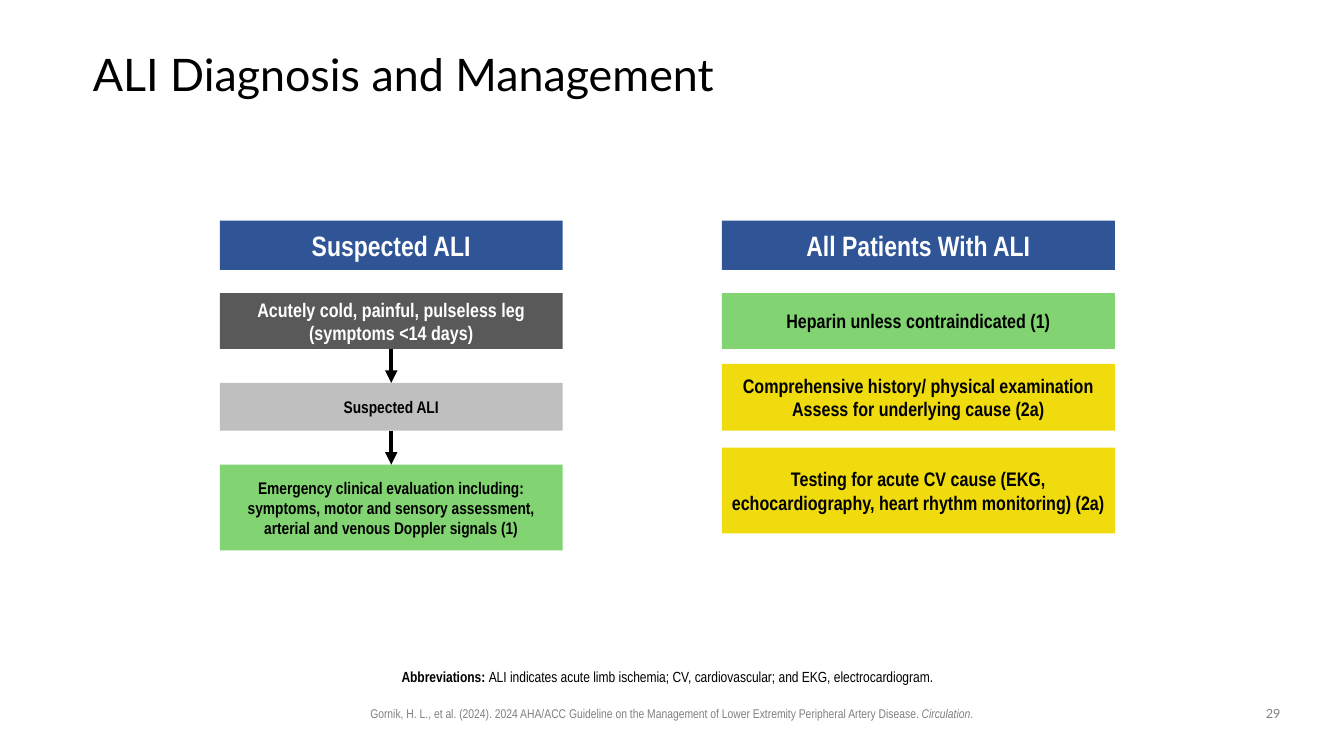
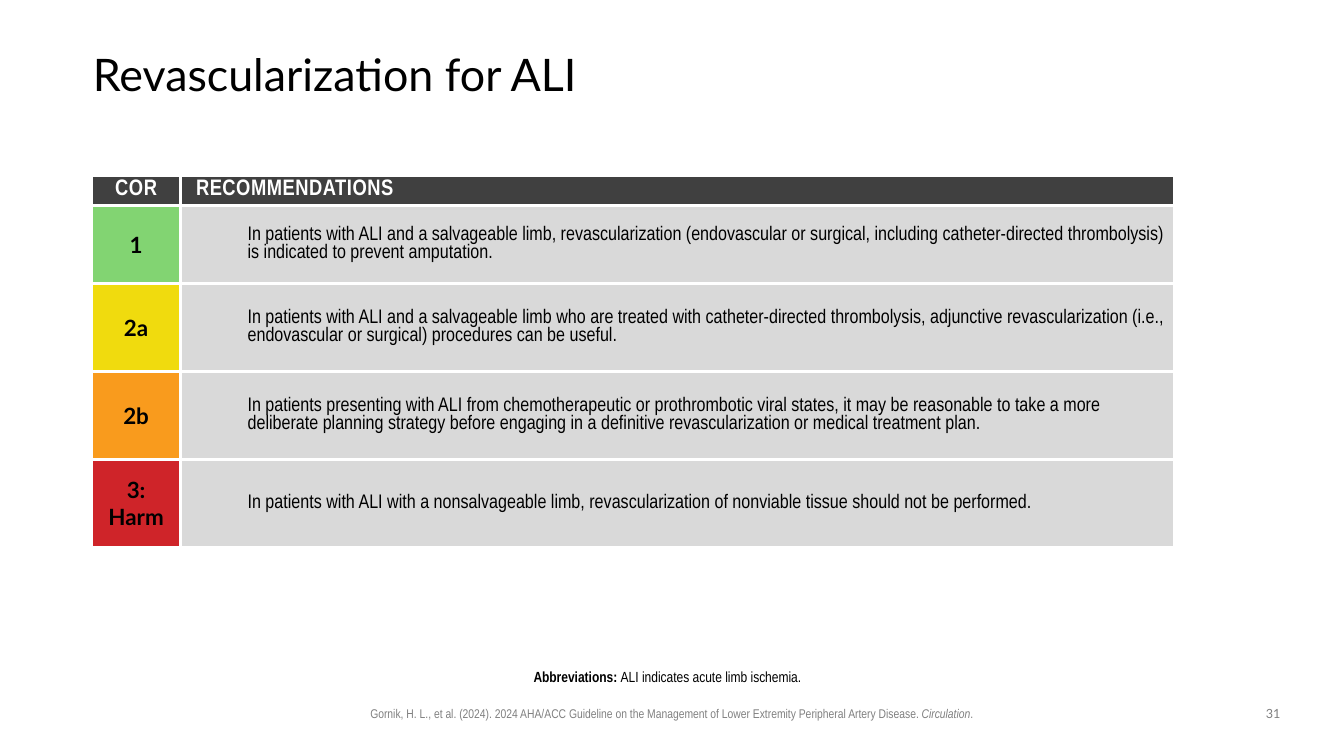
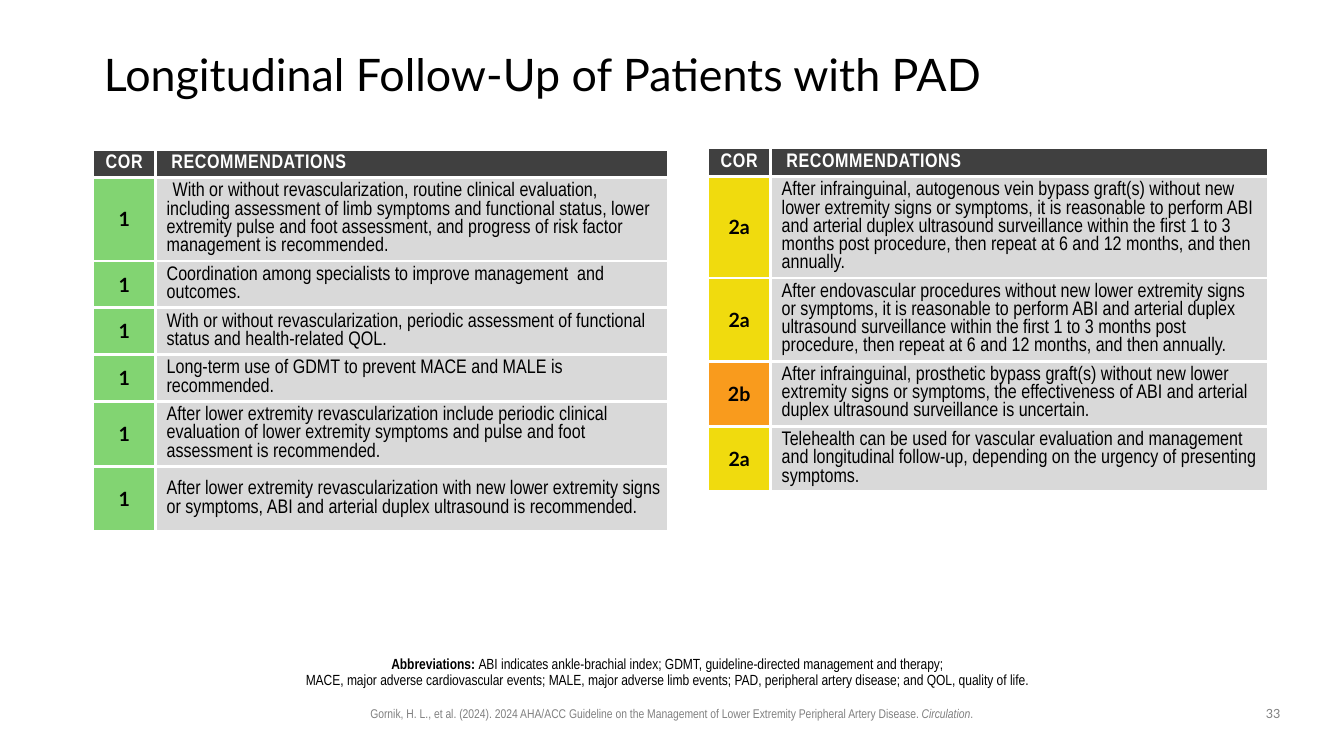
"""Build three slides on acute limb ischemia care and follow-up of peripheral artery disease."""
from dataclasses import dataclass, replace

from lxml import etree
from pptx import Presentation
from pptx.dml.color import RGBColor
from pptx.enum.shapes import MSO_CONNECTOR, MSO_SHAPE
from pptx.enum.text import MSO_ANCHOR, PP_ALIGN
from pptx.oxml.ns import qn
from pptx.presentation import Presentation as Deck
from pptx.shapes.autoshape import Shape
from pptx.slide import Slide
from pptx.table import _Cell
from pptx.text.text import TextFrame, _Paragraph
from pptx.util import Cm, Pt

LEFT, CENTER = PP_ALIGN.LEFT, PP_ALIGN.CENTER
TOP, MIDDLE = MSO_ANCHOR.TOP, MSO_ANCHOR.MIDDLE
RECTANGLE, STRAIGHT = MSO_SHAPE.RECTANGLE, MSO_CONNECTOR.STRAIGHT
BOTTOM_SIDE, TOP_SIDE = 2, 0

COLORS = {
    "black": "000000", "white": "FFFFFF", "footer": "808080",
    "heading": "2F5597", "symptom": "595959", "suspected": "BFBFBF",
    "table_head": "404040", "table_body": "D9D9D9",
    "1": "82D472", "2a": "F0DB0E", "2b": "F99B1D", "3: Harm": "CF2429",
}
NARROW, LATO = "Arial Narrow", "Lato"
CELL_LINE = Pt(13)
BORDER_WIDTH = Pt(2.25)


@dataclass(frozen=True)
class TextStyle:
    """Look of a run of text."""
    size: float
    color: str = "black"
    font: str = NARROW
    bold: bool = False
    italic: bool = False
    tracking: int = 0


@dataclass(frozen=True)
class Area:
    """Place and size in centimetres."""
    left: float
    top: float
    width: float
    height: float


@dataclass(frozen=True)
class Step:
    """One filled box in a care pathway."""
    text: str
    top: float
    height: float
    fill: str
    style: TextStyle
    margin: tuple[float, float] = (0.25, 0.13)


@dataclass(frozen=True)
class Recommendation:
    """One table row with its class of recommendation."""
    cor: str
    text: str
    height: float
    first_indent: float = 0


@dataclass(frozen=True)
class RecommendationTable:
    """A table of recommendations."""
    left: float
    top: float
    cor_width: float
    text_width: float
    head_height: float
    head_size: int
    indent: float
    rows: list[Recommendation]


TITLE = TextStyle(32, font=LATO)
NOTE = TextStyle(10.5)
FOOTER = TextStyle(9, "footer")
HEADING = TextStyle(20, "white", bold=True)
STEP = TextStyle(14, bold=True)
SMALL_STEP = replace(STEP, size=12)
BODY = TextStyle(14)


def rgb(name: str) -> RGBColor:
    """Return a named colour."""
    return RGBColor.from_string(COLORS[name])


def add_run(paragraph: _Paragraph, text: str, style: TextStyle) -> None:
    """Add styled text, breaking lines at newlines."""
    for index, line in enumerate(text.split("\n")):
        if index:
            paragraph.add_line_break()
        run = paragraph.add_run()
        run.text = line
        font = run.font
        font.size, font.name = Pt(style.size), style.font
        font.bold, font.italic = style.bold, style.italic
        font.color.rgb = rgb(style.color)
        if style.tracking:
            font._element.set("spc", str(style.tracking))


def set_margins(target: TextFrame | _Cell, left: float, top: float, right: float, bottom: float) -> None:
    """Set the four insets in centimetres."""
    target.margin_left, target.margin_top = Cm(left), Cm(top)
    target.margin_right, target.margin_bottom = Cm(right), Cm(bottom)


def add_text(slide: Slide, area: Area, runs: list[tuple[str, TextStyle]], align: PP_ALIGN = CENTER,
             anchor: MSO_ANCHOR = TOP, margins: tuple[float, float, float, float] = (0.25, 0.13, 0.25, 0.13),
             spacing: float = 1.0) -> None:
    """Add a wrapped one-paragraph text box."""
    frame = slide.shapes.add_textbox(Cm(area.left), Cm(area.top), Cm(area.width), Cm(area.height)).text_frame
    frame.word_wrap = True
    frame.vertical_anchor = anchor
    set_margins(frame, *margins)
    paragraph = frame.paragraphs[0]
    paragraph.alignment, paragraph.line_spacing = align, spacing
    for text, style in runs:
        add_run(paragraph, text, style)


def add_base(deck: Deck, title: str, abbreviations: str, number: int,
             title_indent: float = 0, note_top: float = 16.74) -> Slide:
    """Add a slide with title, abbreviations, citation and number."""
    slide = deck.slides.add_slide(deck.slide_layouts[6])
    add_text(slide, Area(7.47, 17.65, 18.92, 0.64), [
        ("Gornik, H. L., et al. (2024). 2024 AHA/ACC Guideline on the Management of "
         "Lower Extremity Peripheral Artery Disease. ", FOOTER),
        ("Circulation", replace(FOOTER, italic=True)),
        (".", FOOTER),
    ])
    add_text(slide, Area(2.34, 1.02, 29.21, 1.83), [(title, TITLE)], LEFT, MIDDLE, (title_indent, 0, 0, 0), 0.9)
    add_text(slide, Area(5.97, note_top, 21.95, 17.32 - note_top),
             [("Abbreviations: ", replace(NOTE, bold=True)), (abbreviations, NOTE)],
             margins=(0, 0.13, 0.25, 0.13), spacing=0.9)
    add_text(slide, Area(31.55, 17.65, 1.07, 0.66), [(str(number), replace(FOOTER, font=LATO))])
    return slide


def add_step(slide: Slide, step: Step, left: float, width: float) -> Shape:
    """Draw one pathway box."""
    box = slide.shapes.add_shape(RECTANGLE, Cm(left), Cm(step.top), Cm(width), Cm(step.height))
    box.shadow.inherit = False
    box.fill.solid()
    box.fill.fore_color.rgb = rgb(step.fill)
    box.line.fill.background()
    frame = box.text_frame
    frame.word_wrap = True
    frame.vertical_anchor = MIDDLE
    set_margins(frame, *step.margin, *step.margin)
    paragraph = frame.paragraphs[0]
    paragraph.alignment = CENTER
    add_run(paragraph, step.text, step.style)
    return box


def add_arrow(slide: Slide, upper: Shape, lower: Shape) -> None:
    """Join two boxes with a downward arrow."""
    arrow = slide.shapes.add_connector(STRAIGHT, 0, 0, 0, 0)
    arrow.begin_connect(upper, BOTTOM_SIDE)
    arrow.end_connect(lower, TOP_SIDE)
    arrow.line.width = Pt(3)
    arrow.line.color.rgb = rgb("black")
    etree.SubElement(arrow.line._get_or_add_ln(), qn("a:tailEnd"), type="triangle")
    etree.SubElement(arrow._element.spPr, qn("a:effectLst"))


def fill_cell(cell: _Cell, text: str, style: TextStyle, fill: str, align: PP_ALIGN, indent: float = 0,
              first_indent: float = 0, side: float = 0.13, line: int | None = None) -> None:
    """Write one bordered table cell."""
    properties = cell._tc.get_or_add_tcPr()
    for edge in ("lnL", "lnR", "lnT", "lnB"):
        border = etree.SubElement(properties, qn(f"a:{edge}"), w=str(BORDER_WIDTH))
        etree.SubElement(etree.SubElement(border, qn("a:solidFill")), qn("a:srgbClr"), val=COLORS["white"])
    cell.fill.solid()
    cell.fill.fore_color.rgb = rgb(fill)
    cell.vertical_anchor = MIDDLE
    set_margins(cell, side, 0.13, side, 0.13)
    paragraph = cell.text_frame.paragraphs[0]
    paragraph.alignment = align
    if line:
        paragraph.line_spacing = line
    if indent:
        paragraph_properties = paragraph._p.get_or_add_pPr()
        paragraph_properties.set("marL", str(Cm(indent)))
        paragraph_properties.set("indent", str(Cm(first_indent)))
    add_run(paragraph, text, style)


def add_recommendations(slide: Slide, content: RecommendationTable) -> None:
    """Draw a table of recommendations."""
    heights = [content.head_height] + [row.height for row in content.rows]
    widths = (content.cor_width, content.text_width)
    table = slide.shapes.add_table(len(heights), 2, Cm(content.left), Cm(content.top),
                                   Cm(sum(widths)), Cm(sum(heights))).table
    table.horz_banding = False
    for column, width in zip(table.columns, widths):
        column.width = Cm(width)
    for table_row, height in zip(table.rows, heights):
        table_row.height = Cm(height)
    head = TextStyle(content.head_size, "white", bold=True, tracking=50)
    fill_cell(table.cell(0, 0), "COR", head, "table_head", CENTER, side=0.25, line=CELL_LINE)
    fill_cell(table.cell(0, 1), "RECOMMENDATIONS", replace(head, tracking=40), "table_head", LEFT,
              0.15, side=0.25, line=CELL_LINE)
    cor_style = TextStyle(content.head_size, font=LATO, bold=True)
    for index, row in enumerate(content.rows, 1):
        fill_cell(table.cell(index, 0), row.cor, cor_style, row.cor, CENTER)
        fill_cell(table.cell(index, 1), row.text, BODY, "table_body", LEFT,
                  content.indent, row.first_indent, line=CELL_LINE)


def fit(lines: int) -> float:
    """Return the row height in centimetres for a number of text lines."""
    return round(lines * CELL_LINE.cm + 0.26, 2)


def build_diagnosis(deck: Deck) -> None:
    """Build the diagnosis and management slide."""
    slide = add_base(deck, "ALI Diagnosis and Management",
                     "ALI indicates acute limb ischemia; CV, cardiovascular; and EKG, electrocardiogram.", 29)
    suspected = [
        Step("Acutely cold, painful, pulseless leg (symptoms <14 days)", 7.39, 1.4, "symptom",
             replace(STEP, color="white")),
        Step("Suspected ALI", 9.65, 1.2, "suspected", SMALL_STEP),
        Step("Emergency clinical evaluation including: symptoms, motor and sensory assessment, "
             "arterial and venous Doppler signals (1)", 11.71, 2.16, "1", SMALL_STEP),
    ]
    all_patients = [
        Step("Heparin unless contraindicated (1)", 7.39, 1.4, "1", STEP),
        Step("Comprehensive history/ physical examination\nAssess for underlying cause (2a)",
             9.17, 1.68, "2a", STEP),
        Step("Testing for acute CV cause (EKG, echocardiography, heart rhythm monitoring) (2a)",
             11.28, 2.16, "2a", STEP),
    ]
    pathways = (("Suspected ALI", 5.54, 8.64, suspected, True),
                ("All Patients With ALI", 18.19, 9.91, all_patients, False))
    for heading, left, width, steps, linked in pathways:
        add_step(slide, Step(heading, 5.56, 1.24, "heading", HEADING, (0, 0)), left, width)
        boxes = [add_step(slide, step, left, width) for step in steps]
        if linked:
            for upper, lower in zip(boxes, boxes[1:]):
                add_arrow(slide, upper, lower)


def build_revascularization(deck: Deck) -> None:
    """Build the revascularization slide."""
    slide = add_base(deck, "Revascularization for ALI", "ALI indicates acute limb ischemia.", 31)
    add_recommendations(slide, RecommendationTable(2.32, 4.43, 2.22, 25.05, 0.75, 16, 1.57, [
        Recommendation("1", "In patients with ALI and a salvageable limb, revascularization (endovascular or "
                       "surgical, including catheter-directed thrombolysis) is indicated to prevent amputation.", 1.96),
        Recommendation("2a", "In patients with ALI and a salvageable limb who are treated with catheter-directed "
                       "thrombolysis, adjunctive revascularization (i.e., endovascular or surgical) procedures "
                       "can be useful.", 2.22),
        Recommendation("2b", "In patients presenting with ALI from chemotherapeutic or prothrombotic viral states, "
                       "it may be reasonable to take a more deliberate planning strategy before engaging in a "
                       "definitive revascularization or medical treatment plan.", 2.22),
        Recommendation("3: Harm", "In patients with ALI with a nonsalvageable limb, revascularization of nonviable "
                       "tissue should not be performed.", 2.22),
    ]))


def build_follow_up(deck: Deck) -> None:
    """Build the longitudinal follow-up slide."""
    slide = add_base(deck, "Longitudinal Follow-Up of Patients with PAD",
                     "ABI indicates ankle-brachial index; GDMT, guideline-directed management and therapy;\n"
                     "MACE, major adverse cardiovascular events; MALE, major adverse limb events; "
                     "PAD, peripheral artery disease; and QOL, quality of life.", 33, 0.28, 16.43)
    add_recommendations(slide, RecommendationTable(2.34, 3.76, 1.58, 12.93, 0.72, 14, 0.15, [
        Recommendation("1", "With or without revascularization, routine clinical evaluation, including assessment "
                       "of limb symptoms and functional status, lower extremity pulse and foot assessment, and "
                       "progress of risk factor management is recommended.", fit(4), 0.15),
        Recommendation("1", "Coordination among specialists to improve management  and outcomes.", fit(2)),
        Recommendation("1", "With or without revascularization, periodic assessment of functional status and "
                       "health-related QOL.", fit(2)),
        Recommendation("1", "Long-term use of GDMT to prevent MACE and MALE is recommended.", fit(2)),
        Recommendation("1", "After lower extremity revascularization include periodic clinical evaluation of lower "
                       "extremity symptoms and pulse and foot assessment is recommended.", fit(3)),
        Recommendation("1", "After lower extremity revascularization with new lower extremity signs or symptoms, "
                       "ABI and arterial duplex ultrasound is recommended.", fit(3)),
    ]))
    add_recommendations(slide, RecommendationTable(17.84, 3.73, 1.58, 12.55, 0.72, 14, 0.15, [
        Recommendation("2a", "After infrainguinal, autogenous vein bypass graft(s) without new lower extremity signs "
                       "or symptoms, it is reasonable to perform ABI and arterial duplex ultrasound surveillance "
                       "within the first 1 to 3 months post procedure, then repeat at 6 and 12 months, and then "
                       "annually.", fit(5)),
        Recommendation("2a", "After endovascular procedures without new lower extremity signs or symptoms, it is "
                       "reasonable to perform ABI and arterial duplex ultrasound surveillance within the first "
                       "1 to 3 months post procedure, then repeat at 6 and 12 months, and then annually.", fit(4)),
        Recommendation("2b", "After infrainguinal, prosthetic bypass graft(s) without new lower extremity signs or "
                       "symptoms, the effectiveness of ABI and arterial duplex ultrasound surveillance is "
                       "uncertain.", fit(3)),
        Recommendation("2a", "Telehealth can be used for vascular evaluation and management and longitudinal "
                       "follow-up, depending on the urgency of presenting symptoms.", fit(3)),
    ]))


def main() -> None:
    """Build and save the presentation."""
    deck = Presentation()
    deck.slide_width, deck.slide_height = Cm(33.87), Cm(19.05)
    build_diagnosis(deck)
    build_revascularization(deck)
    build_follow_up(deck)
    deck.save("out.pptx")


if __name__ == "__main__":
    main()
